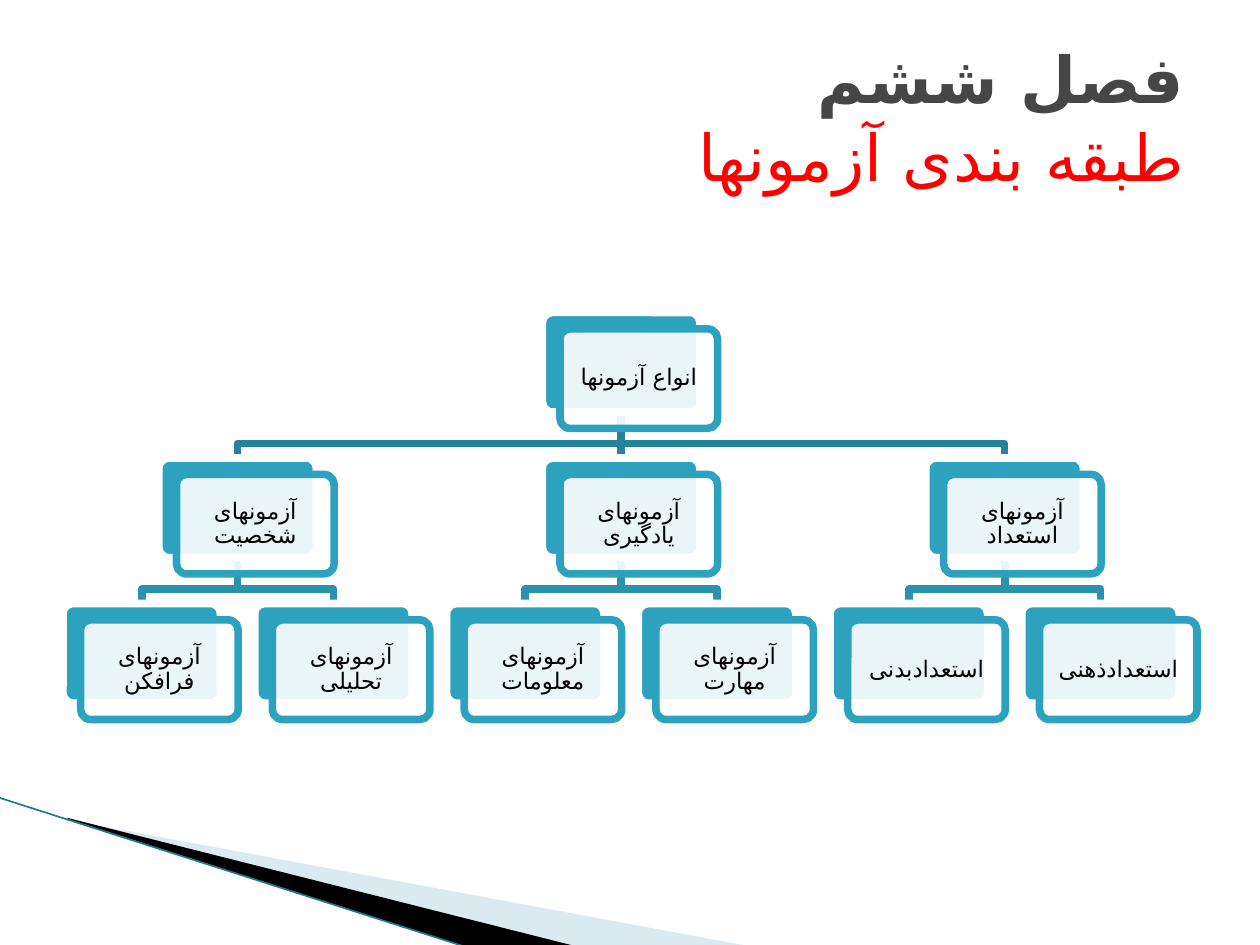
from dataclasses import dataclass

from lxml import etree
from pptx import Presentation
from pptx.dml.color import RGBColor
from pptx.enum import shapes, text
from pptx.oxml import ns
from pptx.util import Inches, Pt


@dataclass(frozen=True)
class Theme:
    font: str = "Karla"
    persian_font: str = "DejaVu Sans"
    title_size: float = 36.9
    card_size: float = 13
    line_width: float = 4.33
    edge_width: float = 0.95
    title: str = "464646"
    subtitle: str = "FF0000"
    ink: str = "000000"
    paper: str = "FFFFFF"
    accent: str = "2DA2BF"
    links: tuple = ("248299", "2993AD")
    wedge: str = "A0CBDC"
    edge: str = "1F7A8C"


@dataclass(frozen=True)
class Box:
    left: float
    top: float
    width: float
    height: float

    def emu(self):
        return [Inches(v) for v in (self.left, self.top, self.width, self.height)]


THEME = Theme()
CARD_WIDTH, CARD_HEIGHT = 1.25, 0.79
CARD_SHIFT_X, CARD_SHIFT_Y = 0.14, 0.13
BEND = 0.25

TEST_TYPES = ("انواع آزمونها", [
    ("آزمونهای شخصیت", [("آزمونهای فرافکن", []), ("آزمونهای تحلیلی", [])]),
    ("آزمونهای یادگیری", [("آزمونهای معلومات", []), ("آزمونهای مهارت", [])]),
    ("آزمونهای استعداد", [("استعدادبدنی", []), ("استعدادذهنی", [])]),
])


def add_run(paragraph, words, *, size, color, bold=False):
    run = paragraph.add_run()
    run.text = words
    run.font.size = Pt(size)
    run.font.bold = bold
    run.font.color.rgb = RGBColor.from_string(color)
    run.font.name = THEME.font
    etree.SubElement(run.font._element, ns.qn("a:cs"), typeface=THEME.persian_font)


def paint_fill(part, color, opacity=100):
    part.shadow.inherit = False
    part.fill.solid()
    part.fill.fore_color.rgb = RGBColor.from_string(color)
    if opacity < 100:
        tint = part._element.spPr.find(ns.qn("a:solidFill"))[0]
        etree.SubElement(tint, ns.qn("a:alpha"), val=str(opacity * 1000))


def paint_line(part, color, width):
    part.line.color.rgb = RGBColor.from_string(color)
    part.line.width = Pt(width)


def add_outline(slide, points, close):
    start, *rest = [(Inches(x), Inches(y)) for x, y in points]
    builder = slide.shapes.build_freeform(*start)
    builder.add_line_segments(rest, close=close)
    return builder.convert_to_shape()


def add_straight(slide, start, end, color, width):
    ends = [Inches(v) for v in (*start, *end)]
    line = slide.shapes.add_connector(shapes.MSO_CONNECTOR.STRAIGHT, *ends)
    paint_line(line, color, width)
    etree.SubElement(line._element.spPr, ns.qn("a:effectLst"))
    return line


def corner_wedges(slide, box):
    def place(points):
        return [(box.left + x, box.top + y) for x, y in points]

    wedges = [
        ([(0.55, 0.18), (5.95, 1.18), (4.56, 1.18), (0.55, 0.17)], THEME.wedge, 40),
        ([(0.53, 0.16), (4.57, 1.18), (3.72, 1.19), (0.54, 0.17)], THEME.ink, 100),
    ]
    for points, color, opacity in wedges:
        wedge = add_outline(slide, place(points), close=True)
        paint_fill(wedge, color, opacity)
        wedge.line.fill.background()
    start, end = place([(-0.01, 0), (3.71, 1.19)])
    add_straight(slide, start, end, THEME.edge, THEME.edge_width)


def card(slide, box, label):
    front_box = Box(box.left + CARD_SHIFT_X, box.top + CARD_SHIFT_Y, box.width, box.height)
    plates = []
    for plate_box, fill, opacity, line in (
        (box, THEME.accent, 100, THEME.paper),
        (front_box, THEME.paper, 90, THEME.accent),
    ):
        plate = slide.shapes.add_shape(shapes.MSO_SHAPE.ROUNDED_RECTANGLE, *plate_box.emu())
        plate.adjustments[0] = 0.1
        paint_fill(plate, fill, opacity)
        paint_line(plate, line, THEME.line_width)
        plates.append(plate)
    back, front = plates
    frame = front.text_frame
    frame.word_wrap = True
    frame.vertical_anchor = text.MSO_ANCHOR.MIDDLE
    frame.margin_left = frame.margin_right = Inches(0.05)
    frame.margin_top = frame.margin_bottom = Inches(0.05)
    paragraph = frame.paragraphs[0]
    paragraph.alignment = text.PP_ALIGN.CENTER
    paragraph.line_spacing = 0.9
    add_run(paragraph, label, size=THEME.card_size, color=THEME.ink)
    return back


def link(slide, parent, child, color):
    (parent_card, parent_box), (child_card, child_box) = parent, child
    x1, x2 = (b.left + b.width / 2 for b in (parent_box, child_box))
    y1, y2 = parent_box.top + parent_box.height, child_box.top
    if abs(x1 - x2) < 0.01:
        branch = add_straight(slide, (x1, y1), (x2, y2), color, THEME.line_width)
        branch.begin_connect(parent_card, 2)
        branch.end_connect(child_card, 0)
    else:
        bend = y1 + BEND
        branch = add_outline(slide, [(x1, y1), (x1, bend), (x2, bend), (x2, y2)], close=False)
        branch.shadow.inherit = False
        branch.fill.background()
        paint_line(branch, color, THEME.line_width)
    return branch


def test_tree(slide, box, tree):
    def count_leaves(node):
        return sum(map(count_leaves, node[1])) or 1

    step = (box.width - CARD_WIDTH - CARD_SHIFT_X) / (count_leaves(tree) - 1)
    pitch = (box.height - CARD_HEIGHT - CARD_SHIFT_Y) / 2
    links = []

    def grow(node, first_leaf, level):
        label, children = node
        left = box.left + step * (first_leaf + (count_leaves(node) - 1) / 2)
        card_box = Box(left, box.top + level * pitch, CARD_WIDTH, CARD_HEIGHT)
        placed = card(slide, card_box, label), card_box
        for child in children:
            links.append((placed, grow(child, first_leaf, level + 1), THEME.links[min(level, 1)]))
            first_leaf += count_leaves(child)
        return placed

    root_card, _ = grow(tree, 0, 0)
    for parent, child, color in links:
        branch = link(slide, parent, child, color)
        root_card._element.addprevious(branch._element)


def chapter_title(slide, box, chapter, topic):
    title = slide.shapes.title
    title.left, title.top, title.width, title.height = box.emu()
    frame = title.text_frame
    frame.word_wrap = True
    frame.auto_size = text.MSO_AUTO_SIZE.NONE
    frame.vertical_anchor = text.MSO_ANCHOR.MIDDLE
    paragraph = frame.paragraphs[0]
    paragraph.alignment = text.PP_ALIGN.RIGHT
    paragraph._p.get_or_add_pPr().set("rtl", "1")
    add_run(paragraph, chapter, size=THEME.title_size, color=THEME.title, bold=True)
    paragraph.add_line_break()
    add_run(paragraph, topic, size=THEME.title_size, color=THEME.subtitle)


def main():
    deck = Presentation()
    deck.slide_width, deck.slide_height = Inches(10), Inches(7.5)
    slide = deck.slides.add_slide(deck.slide_layouts[5])
    corner_wedges(slide, Box(0, 6.33, 5.95, 1.19))
    test_tree(slide, Box(0.5, 2.48, 9, 3.23), TEST_TYPES)
    chapter_title(slide, Box(0.5, 0.3, 9, 1.25), "فصل ششم", "طبقه بندی آزمونها")
    deck.save("out.pptx")


if __name__ == "__main__":
    main()
